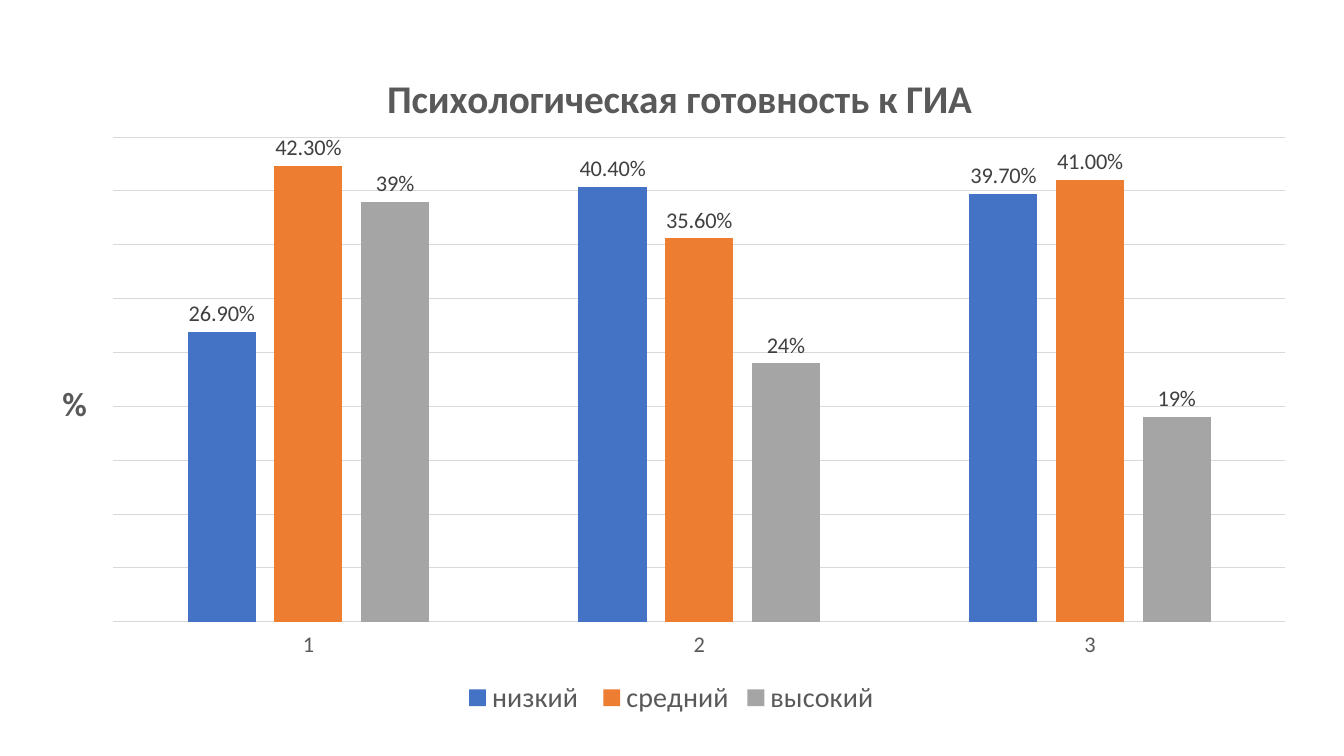
"""Build a slide with a clustered column chart of exam readiness levels."""
from dataclasses import dataclass

from lxml.etree import SubElement
from pptx import Presentation
from pptx.chart.data import CategoryChartData
from pptx.dml.color import RGBColor
from pptx.enum.chart import XL_CHART_TYPE, XL_LABEL_POSITION, XL_LEGEND_POSITION, XL_TICK_LABEL_POSITION, XL_TICK_MARK
from pptx.oxml.ns import qn
from pptx.util import Inches, Pt

TITLE = "Психологическая готовность к ГИА"
AXIS_TITLE = "%"
CATEGORIES = ["1", "2", "3"]
SERIES = [
    ("низкий ", (0.269, 0.404, 0.397), "4472C4", "0.00%"),
    ("средний", (0.423, 0.356, 0.41), "ED7D31", "0.00%"),
    ("высокий", (0.39, 0.24, 0.19), "A5A5A5", "0%"),
]
SLIDE_SIZE = (13.33, 7.5)
CHART_BOX = (0.32, 0.34, 12.68, 6.81)
PLOT_BOX = (1.12, 1.36, 11.63, 4.81)
TITLE_AT = (3.77, 0.64)
AXIS_TITLE_AT = (0.56, 3.72)


@dataclass(frozen=True)
class Theme:
    font: str = "Calibri"
    text: str = "595959"
    label: str = "404040"
    line: str = "D9D9D9"
    title_size: int = 28
    axis_title_size: int = 24
    legend_size: int = 20
    label_size: int = 16
    line_width: float = 0.75


THEME = Theme()


def style_font(font, size, color, bold=False):
    font.name = THEME.font
    font.size = Pt(size)
    font.bold = bold
    font.color.rgb = RGBColor.from_string(color)


def style_line(line):
    line.color.rgb = RGBColor.from_string(THEME.line)
    line.width = Pt(THEME.line_width)


def place(element, box, index):
    """Put a chart part at a slide position, given in inches."""
    for layout in element.findall(qn("c:layout")):
        element.remove(layout)
    layout = SubElement(element, qn("c:layout"))
    element.insert(index, layout)
    manual = SubElement(layout, qn("c:manualLayout"))
    left, top, width, height = CHART_BOX
    fractions = [(box[0] - left) / width, (box[1] - top) / height]
    if len(box) == 4:
        SubElement(manual, qn("c:layoutTarget")).set("val", "inner")
        fractions += [box[2] / width, box[3] / height]
    for side in "xy":
        SubElement(manual, qn(f"c:{side}Mode")).set("val", "edge")
    for side, fraction in zip("xywh", fractions):
        SubElement(manual, qn(f"c:{side}")).set("val", f"{fraction:.4f}")


def write_title(title, text, size, position):
    paragraph = title.text_frame.paragraphs[0]
    paragraph.text = text
    style_font(paragraph.font, size, THEME.text, bold=True)
    title.element.find(".//" + qn("a:bodyPr")).set("rot", "0")
    place(title.element, position, 1)


def add_readiness_chart(slide):
    data = CategoryChartData(number_format="0.00%")
    data.categories = CATEGORIES
    for name, values, _, number_format in SERIES:
        data.add_series(name, values, number_format)
    chart = slide.shapes.add_chart(
        XL_CHART_TYPE.COLUMN_CLUSTERED, *map(Inches, CHART_BOX), data
    ).chart
    style_font(chart.font, THEME.label_size, THEME.text)
    chart.has_title = True
    write_title(chart.chart_title, TITLE, THEME.title_size, TITLE_AT)
    place(chart.element.find(".//" + qn("c:plotArea")), PLOT_BOX, 0)

    chart.has_legend = True
    chart.legend.position = XL_LEGEND_POSITION.BOTTOM
    chart.legend.include_in_layout = False
    style_font(chart.legend.font, THEME.legend_size, THEME.text)

    category_axis = chart.category_axis
    category_axis.major_tick_mark = XL_TICK_MARK.NONE
    category_axis.tick_label_position = XL_TICK_LABEL_POSITION.LOW
    style_font(category_axis.tick_labels.font, THEME.label_size, THEME.text)
    style_line(category_axis.format.line)

    value_axis = chart.value_axis
    value_axis.visible = False
    value_axis.minimum_scale = 0
    value_axis.maximum_scale = 0.45
    value_axis.major_unit = 0.05
    value_axis.has_major_gridlines = True
    style_line(value_axis.major_gridlines.format.line)
    value_axis.has_title = True
    write_title(value_axis.axis_title, AXIS_TITLE, THEME.axis_title_size, AXIS_TITLE_AT)

    plot = chart.plots[0]
    plot.gap_width = 219
    plot.overlap = -27
    plot.vary_by_categories = False
    for series, (_, _, color, number_format) in zip(plot.series, SERIES):
        series.format.fill.solid()
        series.format.fill.fore_color.rgb = RGBColor.from_string(color)
        labels = series.data_labels
        labels.show_value = True
        labels.position = XL_LABEL_POSITION.OUTSIDE_END
        labels.number_format = number_format
        labels.number_format_is_linked = False
        style_font(labels.font, THEME.label_size, THEME.label)


def main():
    presentation = Presentation()
    presentation.slide_width, presentation.slide_height = map(Inches, SLIDE_SIZE)
    slide = presentation.slides.add_slide(presentation.slide_layouts[6])
    add_readiness_chart(slide)
    presentation.save("out.pptx")


if __name__ == "__main__":
    main()
